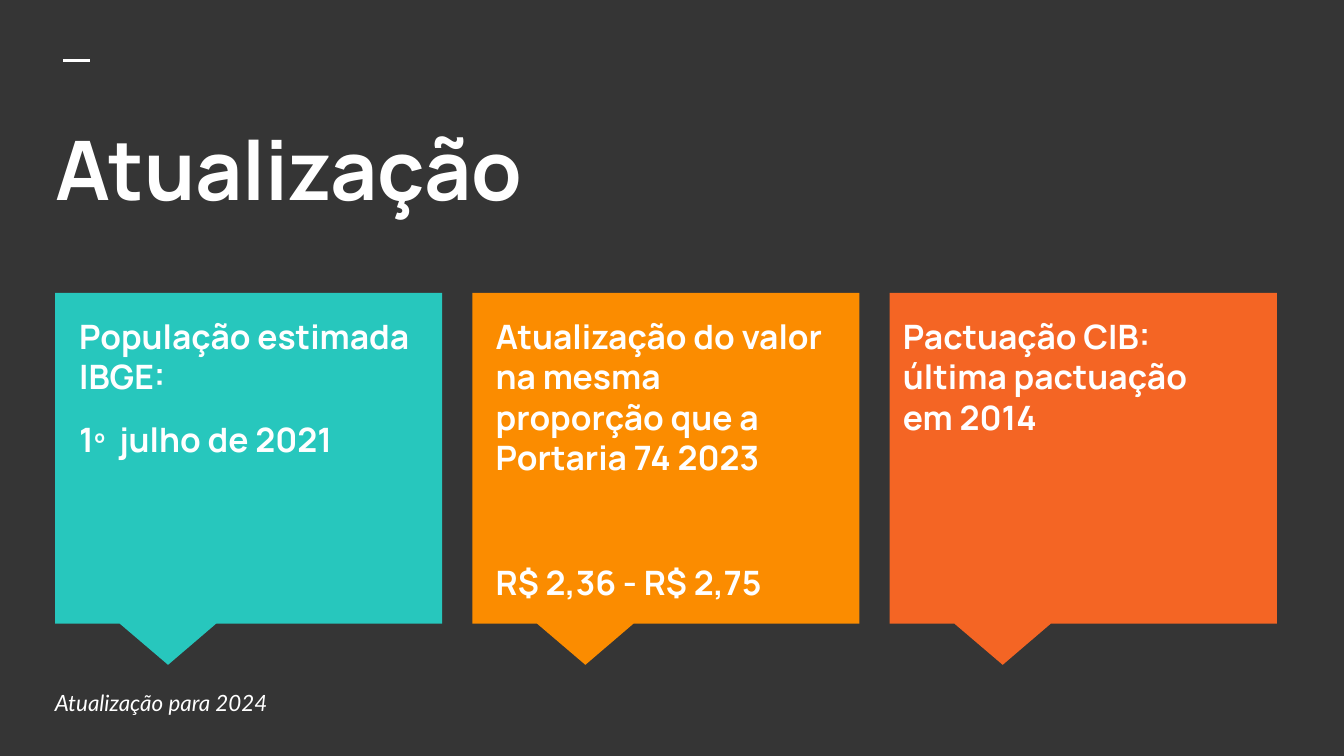
from lxml import etree
from pptx import Presentation
from pptx.dml.color import RGBColor
from pptx.enum import shapes, text
from pptx.oxml.ns import qn
from pptx.util import Inches, Pt

CHARCOAL = RGBColor(0x35, 0x35, 0x35)
WHITE = RGBColor(0xFF, 0xFF, 0xFF)
TEAL = RGBColor(0x27, 0xC7, 0xBD)
AMBER = RGBColor(0xFB, 0x8C, 0x00)
ORANGE = RGBColor(0xF4, 0x65, 0x24)

# Fill, left edge of the text, paragraphs, space before the last paragraph
CARDS = [
    (TEAL, 0.49, ["População estimada IBGE:", "1º  julho de 2021"], 12),
    (AMBER, 3.59, ["Atualização do valor na mesma proporção que a Portaria 74 2023",
                   "R$ 2,36 - R$ 2,75"], 45.5),
    (ORANGE, 6.62, ["Pactuação CIB: última pactuação em 2014"], 0),
]
FIRST_LEFT, LAST_LEFT = 0.41, 6.62
CARD_STEP = (LAST_LEFT - FIRST_LEFT) / (len(CARDS) - 1)


def format_frame(frame, anchor, font_name, size, bold=False, italic=False):
    frame.word_wrap = True
    frame.auto_size = text.MSO_AUTO_SIZE.NONE
    frame.vertical_anchor = anchor
    frame.margin_left = frame.margin_right = Inches(0.1)
    frame.margin_top = frame.margin_bottom = Inches(0.1)
    for paragraph in frame.paragraphs:
        paragraph.alignment = text.PP_ALIGN.LEFT
        for run in paragraph.runs:
            run.font.name = font_name
            run.font.size = Pt(size)
            run.font.bold = bold
            run.font.italic = italic
            run.font.color.rgb = WHITE


presentation = Presentation()
presentation.slide_width = Inches(10)
presentation.slide_height = Inches(10 * 9 / 16)
slide = presentation.slides.add_slide(presentation.slide_layouts[5])
slide.background.fill.solid()
slide.background.fill.fore_color.rgb = CHARCOAL

# Heading with its short accent line
accent = slide.shapes.add_connector(
    shapes.MSO_CONNECTOR.STRAIGHT,
    Inches(0.47), Inches(0.45), Inches(0.67), Inches(0.45))
accent.line.color.rgb = WHITE
accent.line.width = Pt(1.5)
etree.SubElement(accent._element.spPr, qn("a:effectLst"))

title = slide.shapes.title
title.left, title.top = Inches(0.31), Inches(0.78)
title.width, title.height = Inches(9.62), Inches(1.12)
title.text_frame.text = "Atualização"
format_frame(title.text_frame, text.MSO_ANCHOR.TOP, "Manrope", 44, bold=True)

# Three callout cards
for index, (color, text_left, lines, gap) in enumerate(CARDS):
    card = slide.shapes.add_shape(
        shapes.MSO_SHAPE.RECTANGULAR_CALLOUT,
        Inches(FIRST_LEFT + index * CARD_STEP), Inches(2.18),
        Inches(2.88), Inches(2.46))
    card.adjustments[0] = -0.208
    card.adjustments[1] = 0.625
    card.shadow.inherit = False
    card.fill.solid()
    card.fill.fore_color.rgb = color
    card.line.fill.background()

    card_text = slide.shapes.add_textbox(
        Inches(text_left), Inches(2.25), Inches(2.71), Inches(2.19))
    frame = card_text.text_frame
    frame.text = "\n".join(lines)
    format_frame(frame, text.MSO_ANCHOR.TOP, "Manrope", 18, bold=True)
    frame.paragraphs[-1].space_before = Pt(gap)

footer = slide.shapes.add_textbox(
    Inches(0.31), Inches(5.09), Inches(6.83), Inches(0.28))
footer.text_frame.text = "Atualização para 2024"
format_frame(footer.text_frame, text.MSO_ANCHOR.MIDDLE, "Lato", 12, italic=True)

presentation.save("out.pptx")
